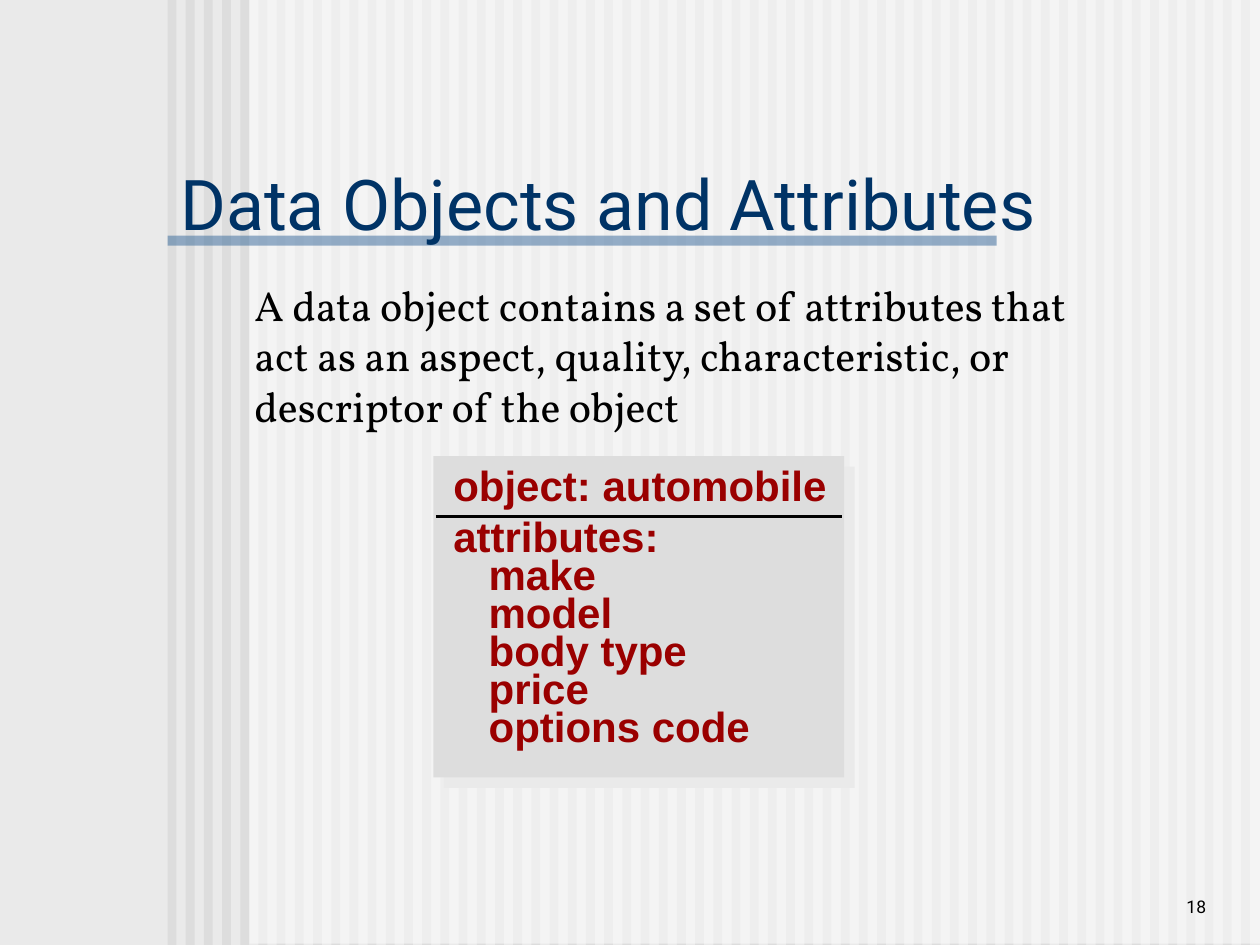
from dataclasses import dataclass

from lxml import etree
from pptx import Presentation
from pptx.dml.color import RGBColor
from pptx.enum.shapes import MSO_CONNECTOR, MSO_SHAPE
from pptx.enum.text import MSO_ANCHOR, MSO_AUTO_SIZE, PP_ALIGN
from pptx.oxml import parse_xml
from pptx.oxml.ns import nsdecls, qn
from pptx.util import Inches, Pt

# Content
TITLE = "Data Objects and Attributes"
BODY = ("A data object contains a set of attributes that act as an aspect, "
        "quality, characteristic, or descriptor of the object")
HEADINGS = ["object: automobile", "attributes:"]
ATTRIBUTES = ["make", "model", "body type", "price", "options code"]
PAGE = "18"


@dataclass(frozen=True)
class Theme:
    back: str = "EAEAEA"
    panel: str = "DDDDDD"
    veil: str = "FFFFFF"
    bar: str = "336699"
    title: str = "003366"
    card_text: str = "9A0000"
    ink: str = "000000"
    sans: str = "Roboto"
    serif: str = "Vollkorn"
    card_font: str = "Arial"
    title_size: int = 40
    text_size: int = 24
    page_size: int = 10


T = Theme()

# Layout, in inches
W, H = 10, 7.5
LEFT = 1.33
STRIPES, LAST_STRIPE, STRIPE_W = 60, 9.85, 0.07
PITCH = (LAST_STRIPE - LEFT) / (STRIPES - 1)
VEIL_LEFT = 1.98
CARD = (3.44, 3.62, 3.26, 2.55)
RULE_Y, RULE_INSET = 4.1, 0.02
INDENT = 0.28


def rgb(color):
    return RGBColor.from_string(color)


def add_rect(s, box, color, alpha=None):
    sp = s.shapes.add_shape(MSO_SHAPE.RECTANGLE, *map(Inches, box))
    sp.shadow.inherit = False
    sp.fill.solid()
    sp.fill.fore_color.rgb = rgb(color)
    sp.line.fill.background()
    if alpha is not None:
        clr = sp.fill._xPr.find(".//" + qn("a:srgbClr"))
        etree.SubElement(clr, qn("a:alpha")).set("val", str(alpha * 1000))
    return sp


def add_text(s, box, lines, font, size, color, bold=False, wrap=True):
    tf = s.shapes.add_textbox(*map(Inches, box)).text_frame
    tf.word_wrap = wrap
    for i, line in enumerate(lines):
        p = tf.paragraphs[0] if i == 0 else tf.add_paragraph()
        p.text = line
        style(p, font, size, color, bold)
    return tf


def style(p, font, size, color, bold=False):
    p.font.name, p.font.size, p.font.bold = font, Pt(size), bold
    p.font.color.rgb = rgb(color)


prs = Presentation()
prs.slide_width, prs.slide_height = Inches(W), Inches(H)
s = prs.slides.add_slide(prs.slide_layouts[5])
s.background.fill.solid()
s.background.fill.fore_color.rgb = rgb(T.back)

# Striped backdrop, veil and title bar
for i in range(STRIPES):
    add_rect(s, (LEFT + i * PITCH, 0, STRIPE_W, H), T.panel)
add_rect(s, (VEIL_LEFT, 0, W - VEIL_LEFT, H - 0.01), T.veil, 50)
add_rect(s, (LEFT, 1.87, 6.58, 0.08), T.bar, 50)

# Page number
tf = add_text(s, (8.25, 6.83, 1.42, 0.5), [PAGE], T.sans, T.page_size, T.ink)
tf.vertical_anchor = MSO_ANCHOR.BOTTOM
tf.paragraphs[0].alignment = PP_ALIGN.RIGHT

# Title, raised above the backdrop
title = s.shapes.title
title.left, title.top, title.width, title.height = map(
    Inches, (LEFT, 1.25, 7.08, 0.72))
tf = title.text_frame
tf.text = TITLE
tf.auto_size = MSO_AUTO_SIZE.NONE
tf.vertical_anchor = MSO_ANCHOR.MIDDLE
tf.paragraphs[0].alignment = PP_ALIGN.LEFT
style(tf.paragraphs[0], T.sans, T.title_size, T.title)
s.shapes._spTree.append(title._element)

# Definition
add_text(s, (1.92, 2.17, 6.93, 1.3), [BODY], T.serif, T.text_size, T.ink)

# Object card with an offset shadow
card = add_rect(s, CARD, T.panel)
card._element.spPr.find(qn("a:effectLst")).append(parse_xml(
    f'<a:outerShdw {nsdecls("a")} dist="{Pt(8.5)}" dir="2700000" '
    f'algn="ctr" rotWithShape="0"><a:srgbClr val="{T.back}"/></a:outerShdw>'))

tf = add_text(s, (3.5, 3.6, 3.16, 2.4), HEADINGS + ATTRIBUTES, T.card_font,
              T.text_size, T.card_text, bold=True, wrap=False)
for p in tf.paragraphs[len(HEADINGS):]:
    p.line_spacing = 0.75
    p._p.get_or_add_pPr().set("marL", str(Inches(INDENT)))

rule = s.shapes.add_connector(
    MSO_CONNECTOR.STRAIGHT, Inches(CARD[0] + RULE_INSET), Inches(RULE_Y),
    Inches(CARD[0] + CARD[2] - RULE_INSET), Inches(RULE_Y))
rule.line.color.rgb = rgb(T.ink)
rule.line.width = Pt(2)
etree.SubElement(rule._element.spPr, qn("a:effectLst"))

prs.save("out.pptx")
